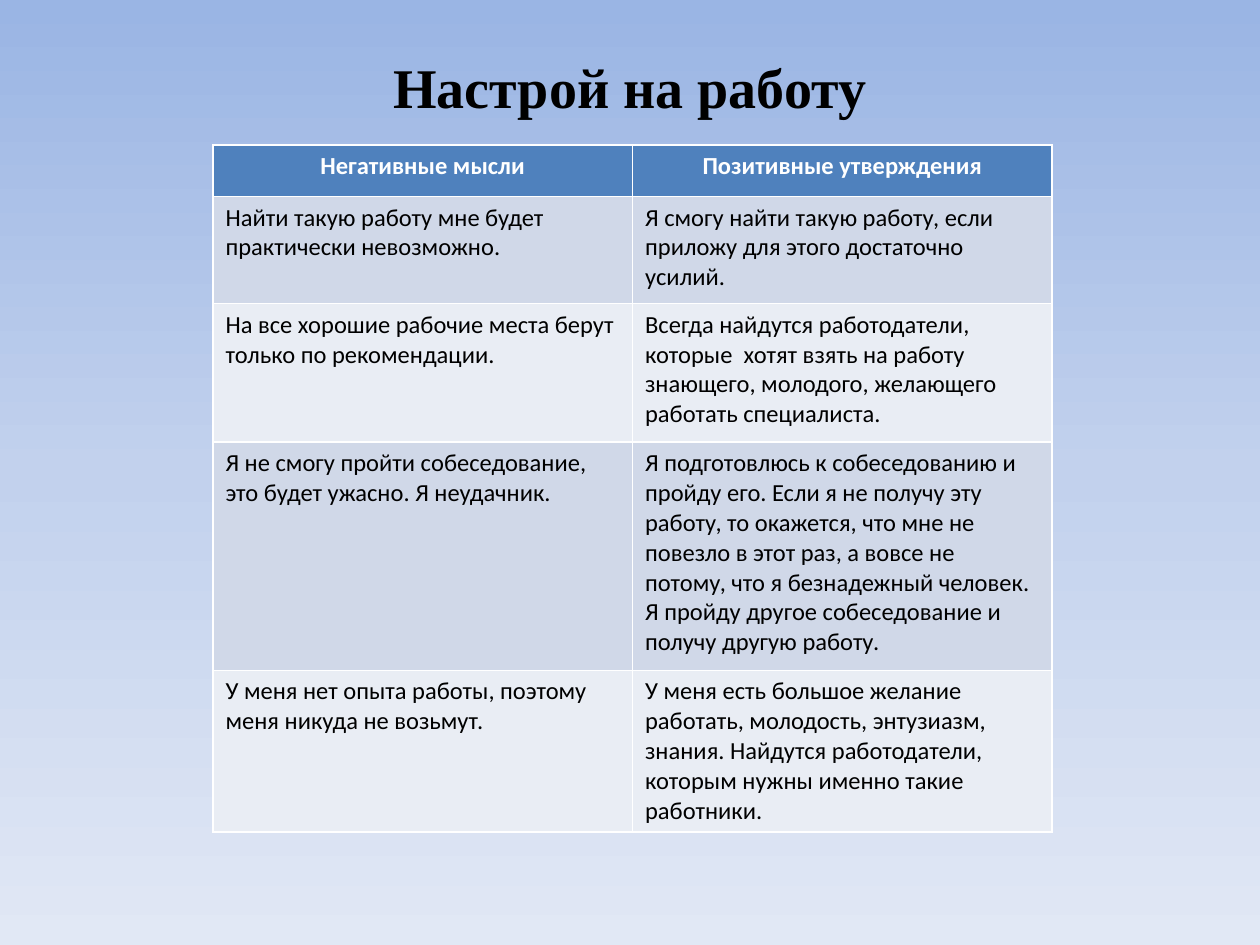
from copy import deepcopy

from pptx import Presentation
from pptx import util as u
from pptx.dml import color
from pptx.enum import text
from pptx.oxml import ns


def rgb(value):
    return color.RGBColor.from_string(value)


def write(frame, words, align, style):
    frame.text = words
    paragraph = frame.paragraphs[0]
    paragraph.alignment = align
    font = paragraph.runs[0].font
    for name, value in style.items():
        if name == "color":
            font.color.rgb = rgb(value)
        else:
            setattr(font, name, value)


presentation = Presentation()
presentation.slide_width = u.Inches(10)
presentation.slide_height = u.Inches(7.5)
slide = presentation.slides.add_slide(presentation.slide_layouts[5])

sky = slide.background.fill
sky.gradient()
sky.gradient_angle = 270
stop_list = slide.element.find(".//" + ns.qn("a:gsLst"))
stop_list.append(deepcopy(stop_list[-1]))
sky_stops = [(0, "9AB5E4"), (0.5, "C2D1ED"), (1, "E1E8F5")]
for stop, (position, shade) in zip(sky.gradient_stops, sky_stops):
    stop.position = position
    stop.color.rgb = rgb(shade)

heading = slide.shapes.title
heading.left, heading.top = u.Inches(0.5), u.Inches(0.3)
heading.width, heading.height = u.Inches(9), u.Inches(0.77)
heading.text_frame.vertical_anchor = text.MSO_ANCHOR.MIDDLE
write(heading.text_frame, "Настрой на работу", text.PP_ALIGN.CENTER,
      {"name": "Times New Roman", "size": u.Pt(32), "bold": True, "color": "000000"})

thoughts = [
    (0.41, "Негативные мысли", "Позитивные утверждения"),
    (0.85, "Найти такую работу мне будет практически невозможно.",
     "Я смогу найти такую работу, если приложу для этого достаточно усилий."),
    (1.1, "На все хорошие рабочие места берут только по рекомендации.",
     "Всегда найдутся работодатели, которые  хотят взять на работу знающего, "
     "молодого, желающего работать специалиста."),
    (1.81, "Я не смогу пройти собеседование, это будет ужасно. Я неудачник.",
     "Я подготовлюсь к собеседованию и пройду его. Если я не получу эту работу, "
     "то окажется, что мне не повезло в этот раз, а вовсе не потому, что я "
     "безнадежный человек. Я пройду другое собеседование и получу другую работу."),
    (1.28, "У меня нет опыта работы, поэтому меня никуда не возьмут.",
     "У меня есть большое желание работать, молодость, энтузиазм, знания. "
     "Найдутся работодатели, которым нужны именно такие работники."),
]
header_style = {"name": "Calibri", "size": u.Pt(14), "bold": True, "color": "FFFFFF"}
body_style = {**header_style, "bold": False, "color": "000000"}

comparison = slide.shapes.add_table(
    len(thoughts), 2, u.Inches(1.69), u.Inches(1.15), u.Inches(6.67), u.Inches(5.45)).table
for column in comparison.columns:
    column.width = u.Inches(3.33)

for index, (height, *statements) in enumerate(thoughts):
    comparison.rows[index].height = u.Inches(height)
    if index == 0:
        band, align, style = "4F81BD", text.PP_ALIGN.CENTER, header_style
    else:
        band = "D0D8E8" if index % 2 else "E9EDF4"
        align, style = text.PP_ALIGN.LEFT, body_style
    for cell, statement in zip(comparison.rows[index].cells, statements):
        cell.fill.solid()
        cell.fill.fore_color.rgb = rgb(band)
        write(cell.text_frame, statement, align, style)

presentation.save("out.pptx")
